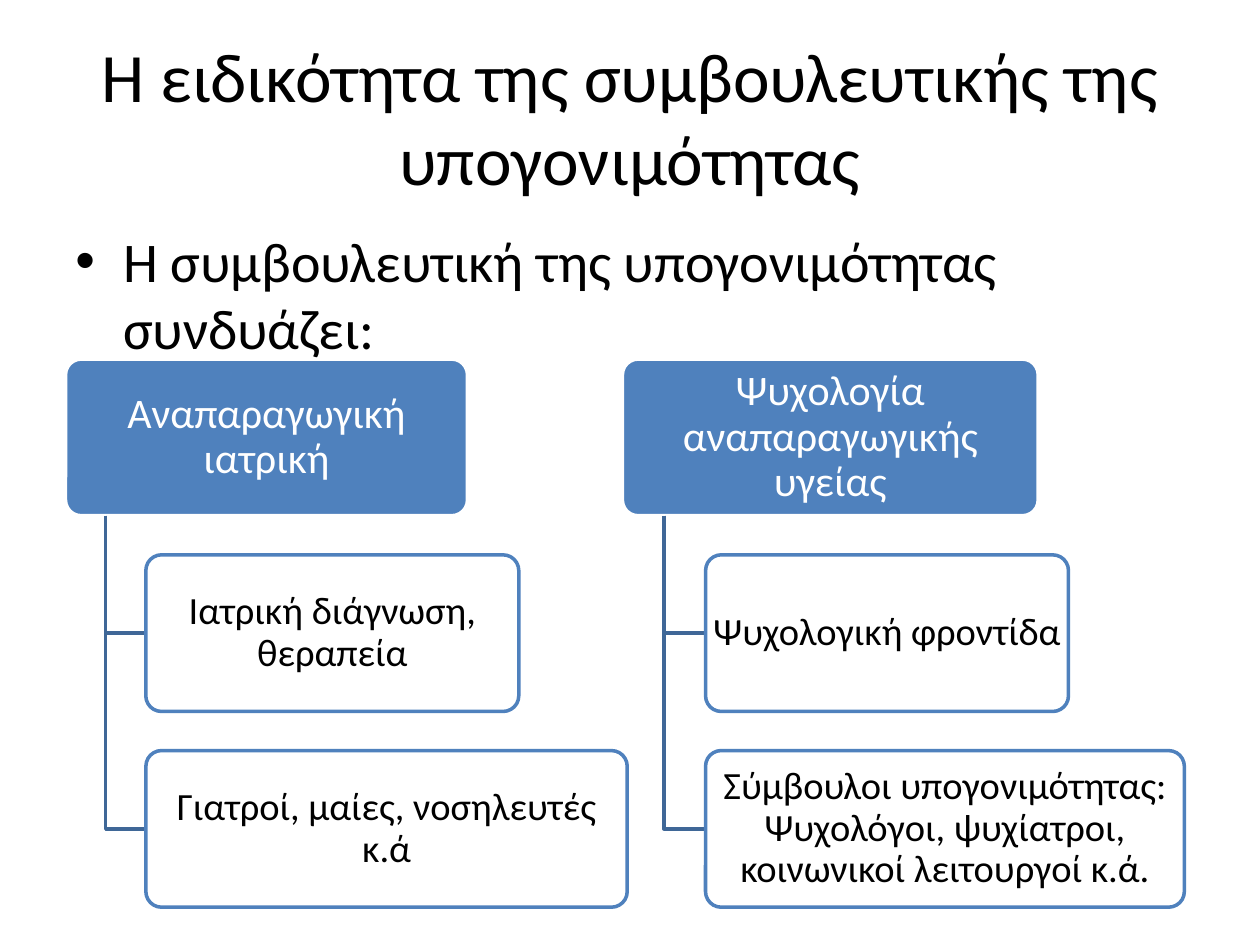
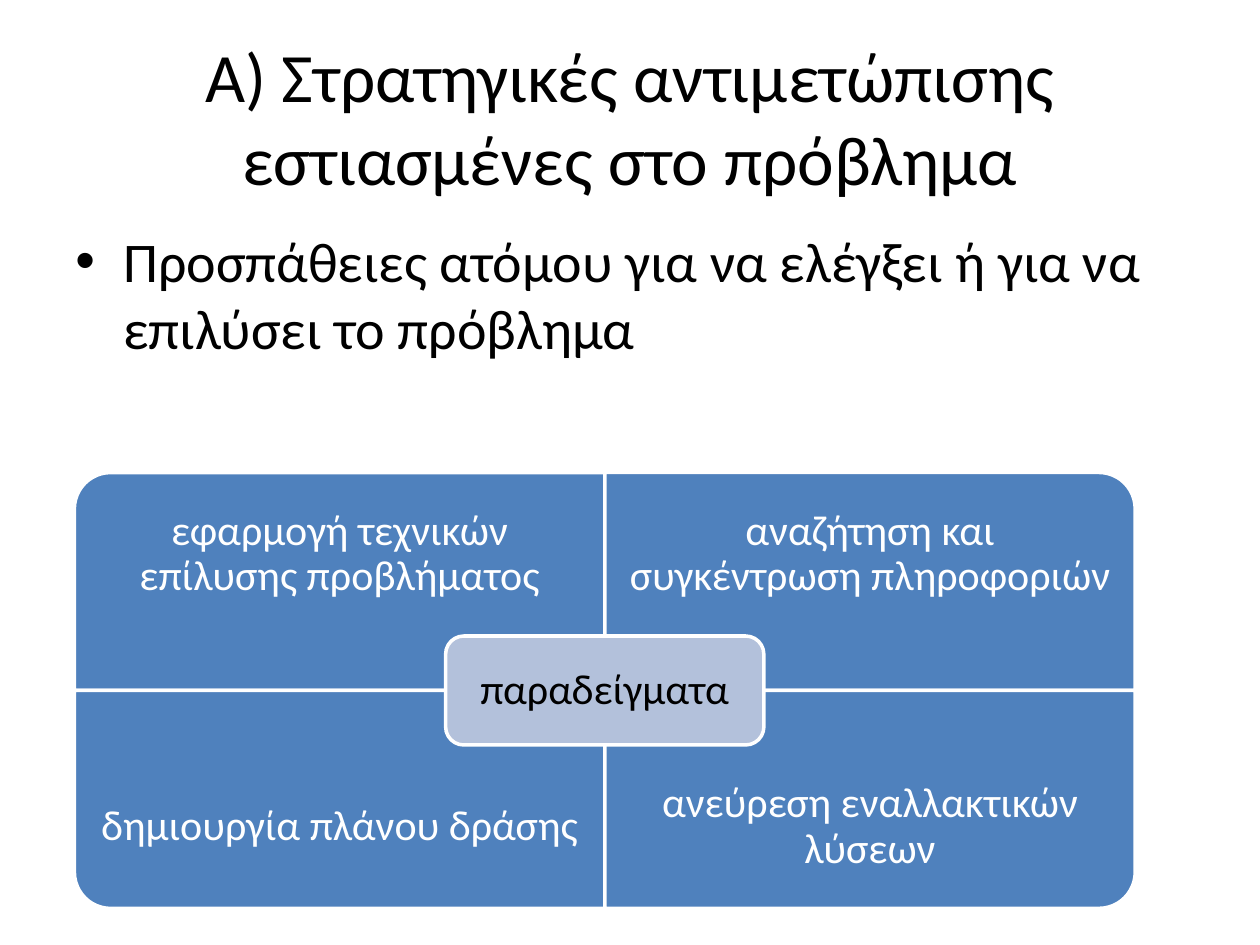
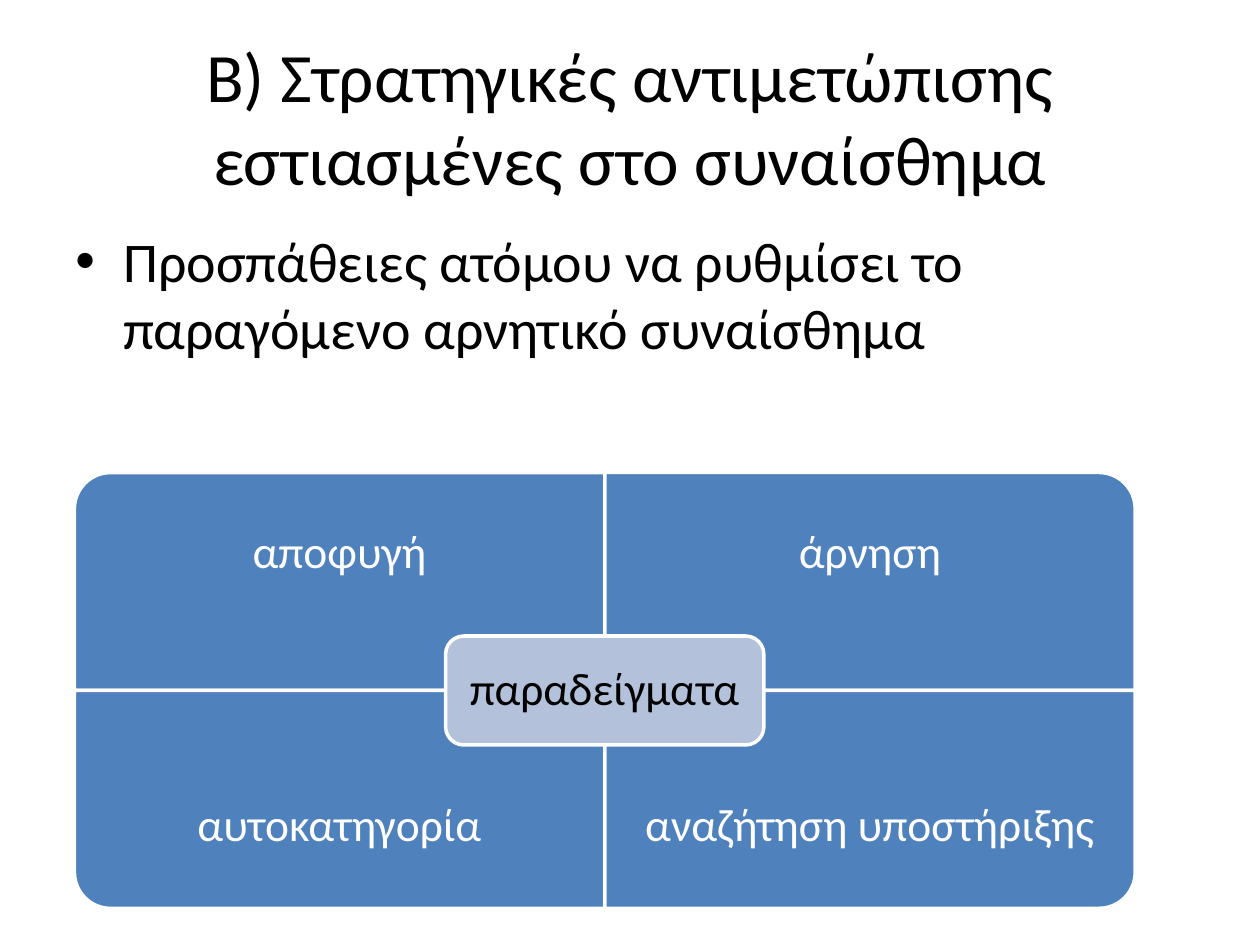
from collections import namedtuple
from dataclasses import dataclass

from lxml.etree import SubElement
from pptx import Presentation
from pptx.dml.color import RGBColor
from pptx.enum.shapes import MSO_SHAPE as Preset
from pptx.enum.text import MSO_ANCHOR as Anchor, PP_ALIGN as Align
from pptx.oxml.ns import qn
from pptx.util import Inches, Pt

Box = namedtuple("Box", "left top width height")


@dataclass(frozen=True)
class Theme:
    font: str = "Calibri"
    ink: str = "000000"
    paper: str = "FFFFFF"
    accent: str = "4F81BD"
    branch: str = "3F6797"
    hub: str = "B3C1DB"
    title_size: float = 39.6
    body_size: float = 32
    root_size: float = 24
    leaf_size: float = 22
    line_width: float = 2
    node_margin: float = 0.01


THEME = Theme()
TITLE_BOX = Box(0.5, 0.3, 9, 1.25)
BODY_BOX = Box(0.5, 1.75, 9, 4.95)
TREE_BOX = Box(0.52, 2.85, 8.88, 4.35)
MATRIX_BOX = Box(0.59, 3.75, 8.42, 3.46)

Branch = namedtuple("Branch", "offset root_width root leaves")
BRANCHES = [
    Branch(0, 3.19, "Αναπαραγωγική ιατρική", [
        (2.96, "Ιατρική διάγνωση, θεραπεία"),
        (3.82, "Γιατροί, μαίες, νοσηλευτές κ.ά"),
    ]),
    Branch(4.42, 3.3, "Ψυχολογία αναπαραγωγικής υγείας", [
        (2.88, "Ψυχολογική φροντίδα"),
        (3.8, "Σύμβουλοι υπογονιμότητας: Ψυχολόγοι, ψυχίατροι, "
              "κοινωνικοί λειτουργοί κ.ά."),
    ]),
]

Strategy = namedtuple("Strategy", "title summary size examples")
STRATEGIES = [
    Strategy(
        "Α) Στρατηγικές αντιμετώπισης εστιασμένες στο πρόβλημα",
        "Προσπάθειες ατόμου για να ελέγξει ή για να επιλύσει το πρόβλημα",
        24,
        ["εφαρμογή τεχνικών επίλυσης προβλήματος",
         "αναζήτηση και συγκέντρωση πληροφοριών",
         "δημιουργία πλάνου δράσης",
         "ανεύρεση εναλλακτικών λύσεων"],
    ),
    Strategy(
        "Β) Στρατηγικές αντιμετώπισης εστιασμένες στο συναίσθημα",
        "Προσπάθειες ατόμου να ρυθμίσει το παραγόμενο αρνητικό συναίσθημα",
        26,
        ["αποφυγή", "άρνηση", "αυτοκατηγορία", "αναζήτηση υποστήριξης"],
    ),
]


def inches(box):
    return [Inches(length) for length in box]


def write(frame, text, size, color, anchor=Anchor.MIDDLE, align=Align.CENTER):
    frame.word_wrap = True
    frame.vertical_anchor = anchor
    frame.text = text
    paragraph = frame.paragraphs[0]
    paragraph.alignment = align
    font = paragraph.runs[0].font
    font.name = THEME.font
    font.size = Pt(size)
    font.color.rgb = RGBColor.from_string(color)
    return paragraph


def write_label(frame, text, size, color, margin):
    frame.margin_left = frame.margin_right = margin
    frame.margin_top = frame.margin_bottom = margin
    paragraph = write(frame, text, size, color)
    paragraph.line_spacing = 0.9
    paragraph.space_after = Pt(size * 0.35)


def outline(shape, color):
    shape.shadow.inherit = False
    shape.line.color.rgb = RGBColor.from_string(color)
    shape.line.width = Pt(THEME.line_width)


def add_panel(slide, preset, box, fill, line):
    panel = slide.shapes.add_shape(preset, *inches(box))
    panel.fill.solid()
    panel.fill.fore_color.rgb = RGBColor.from_string(fill)
    outline(panel, line)
    return panel


def add_heading(slide, title, summary):
    title_frame = slide.shapes.add_textbox(*inches(TITLE_BOX)).text_frame
    write(title_frame, title, THEME.title_size, THEME.ink)

    body_frame = slide.shapes.add_textbox(*inches(BODY_BOX)).text_frame
    bullet = write(body_frame, summary, THEME.body_size, THEME.ink,
                   Anchor.TOP, Align.LEFT)
    bullet.space_before = Pt(THEME.body_size * 0.2)
    properties = bullet._p.get_or_add_pPr()
    properties.set("marL", str(Inches(0.38)))
    properties.set("indent", str(Inches(-0.38)))
    SubElement(properties, qn("a:buFont"), typeface="Arial")
    SubElement(properties, qn("a:buChar"), char="•")


def add_node(slide, box, text, size, fill, line, color):
    node = add_panel(slide, Preset.ROUNDED_RECTANGLE, box, fill, line)
    node.adjustments[0] = 0.1
    write_label(node.text_frame, text, size, color, Inches(THEME.node_margin))
    return node


def add_elbow(slide, left, top, right, bottom):
    builder = slide.shapes.build_freeform(Inches(left), Inches(top))
    builder.add_line_segments(
        [(Inches(left), Inches(bottom)), (Inches(right), Inches(bottom))],
        close=False)
    elbow = builder.convert_to_shape()
    elbow.fill.background()
    outline(elbow, THEME.branch)


def add_branch(slide, box, branch):
    row_height = box.height / 3.5
    row_pitch = row_height * 1.25
    indent = branch.root_width * 0.1
    leaf_left = box.left + 2 * indent

    add_node(slide, Box(box.left, box.top, branch.root_width, row_height),
             branch.root, THEME.root_size, THEME.accent, THEME.paper, THEME.paper)
    for row, (width, text) in enumerate(branch.leaves, start=1):
        top = box.top + row * row_pitch
        add_elbow(slide, box.left + indent, box.top + row_height,
                  leaf_left, top + row_height / 2)
        leaf = add_node(slide, Box(leaf_left, top, width, row_height), text,
                        THEME.leaf_size, THEME.paper, THEME.accent, THEME.ink)
        leaf_color = leaf._element.spPr.find(qn("a:solidFill"))[0]
        SubElement(leaf_color, qn("a:alpha"), val="90000")


def add_tree(slide, box, branches):
    for branch in branches:
        branch_box = box._replace(left=box.left + branch.offset)
        add_branch(slide, branch_box, branch)


def add_quadrant(slide, box, rotation, at_top, text, size):
    frame = box
    if rotation % 180:
        shift = (box.width - box.height) / 2
        frame = Box(box.left + shift, box.top - shift, box.height, box.width)
    quadrant = add_panel(slide, Preset.ROUND_1_RECTANGLE, frame,
                         THEME.accent, THEME.paper)
    quadrant.rotation = rotation

    caption_height = box.height * 0.75
    caption_top = box.top if at_top else box.top + box.height - caption_height
    caption = slide.shapes.add_textbox(
        *inches(box._replace(top=caption_top, height=caption_height)))
    write_label(caption.text_frame, text, size, THEME.paper, Pt(size * 0.56))


def add_matrix(slide, box, examples, size):
    width, height = box.width / 2, box.height / 2
    for index, (text, rotation) in enumerate(zip(examples, (270, 0, 180, 90))):
        row, column = divmod(index, 2)
        cell = Box(box.left + column * width, box.top + row * height, width, height)
        add_quadrant(slide, cell, rotation, row == 0, text, size)

    hub_width, hub_height = box.width * 0.3, box.height * 0.25
    hub_box = Box(box.left + width - hub_width / 2,
                  box.top + height - hub_height / 2, hub_width, hub_height)
    hub = add_panel(slide, Preset.ROUNDED_RECTANGLE, hub_box, THEME.hub, THEME.paper)
    write_label(hub.text_frame, "παραδείγματα", size, THEME.ink, Inches(0.1))


def main():
    deck = Presentation()
    deck.slide_width, deck.slide_height = Inches(10), Inches(7.5)
    blank = deck.slide_layouts[6]

    specialty = deck.slides.add_slide(blank)
    add_heading(specialty, "Η ειδικότητα της συμβουλευτικής της υπογονιμότητας",
                "Η συμβουλευτική της υπογονιμότητας συνδυάζει:")
    add_tree(specialty, TREE_BOX, BRANCHES)

    for strategy in STRATEGIES:
        slide = deck.slides.add_slide(blank)
        add_heading(slide, strategy.title, strategy.summary)
        add_matrix(slide, MATRIX_BOX, strategy.examples, strategy.size)

    deck.save("out.pptx")


if __name__ == "__main__":
    main()
